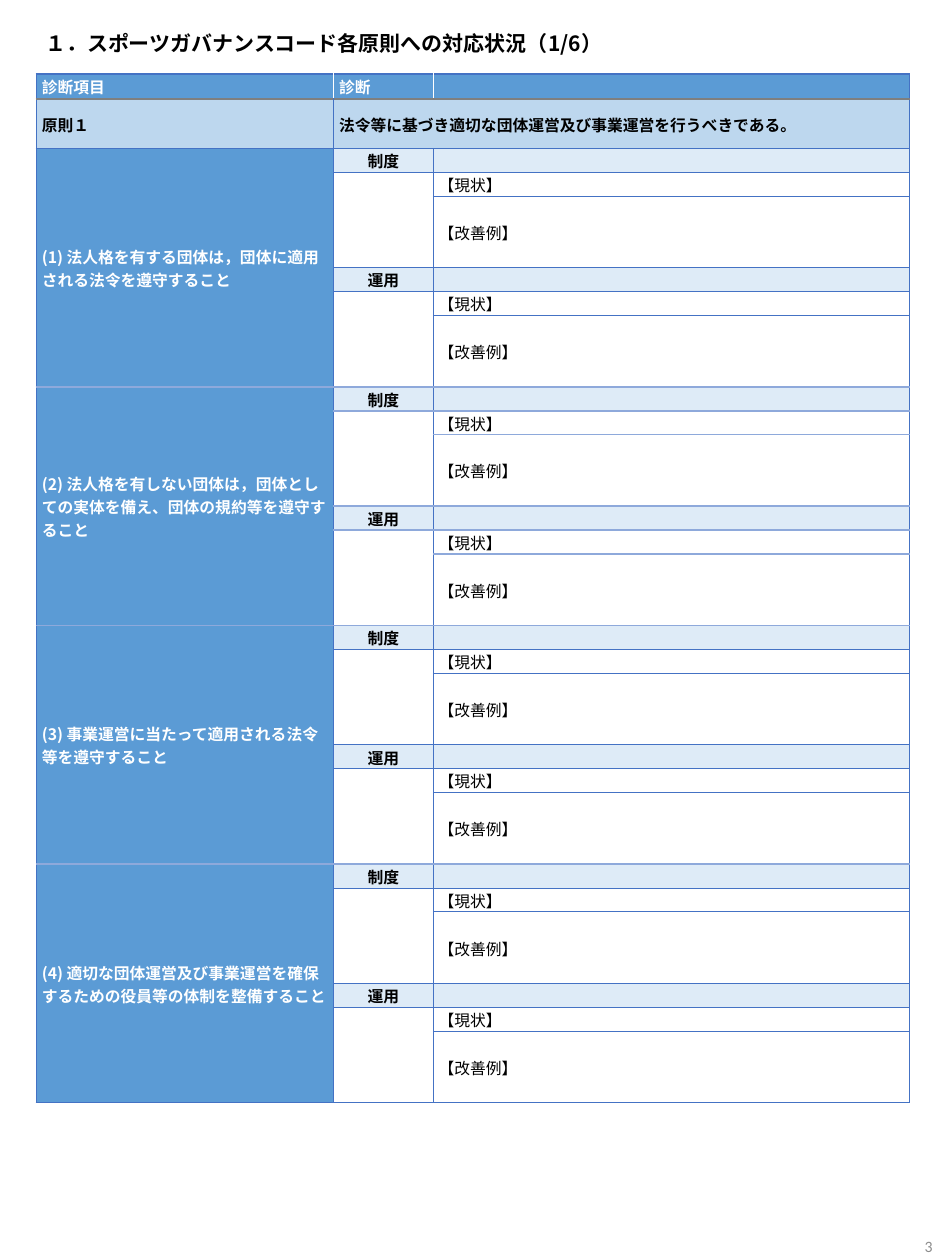
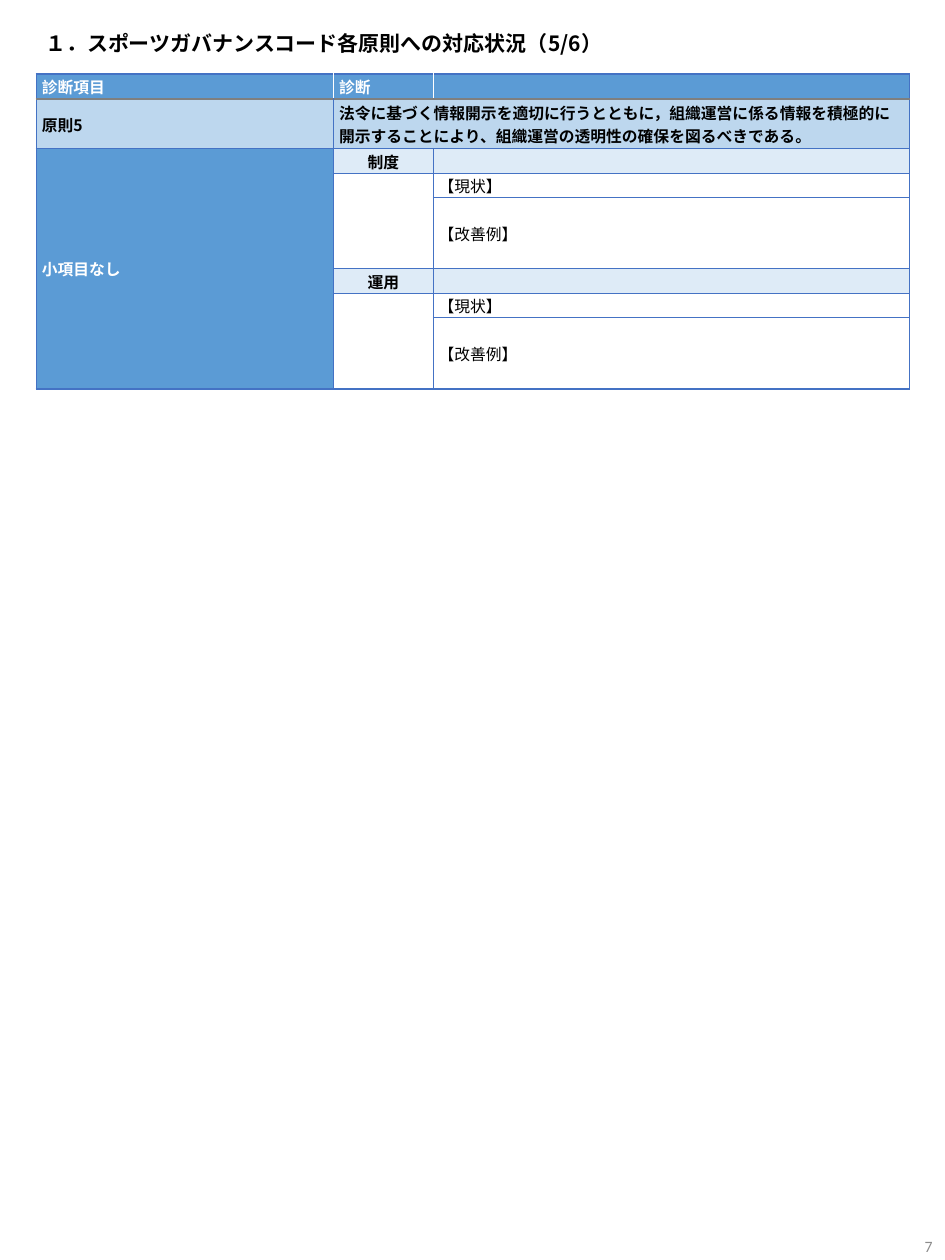
from dataclasses import dataclass

from lxml import etree
from pptx import Presentation
from pptx.dml.color import RGBColor
from pptx.enum.text import MSO_ANCHOR as Anchor, PP_ALIGN as Align
from pptx.oxml import ns
from pptx.util import Pt


@dataclass(frozen=True)
class Theme:
    blue: str = "5B9BD5"
    light: str = "BDD7EE"
    pale: str = "DEEBF7"
    line: str = "4472C4"
    soft: str = "8EA9DB"
    grey: str = "7F7F7F"
    mute: str = "8C8C8C"
    white: str = "FFFFFF"
    black: str = "000000"
    font: str = "Noto Sans CJK JP"
    num: str = "Calibri"
    head: int = 12
    body: int = 9
    thin: float = 0.5
    thick: float = 1


T = Theme()
PLAIN = "{2D5ABB26-0587-4C30-8999-92F81FD0307C}"
COLS = (169.9, 56.9, 272.2)
TOP, LEAD, ROW = 14.2, 28.2, 13.64
STEP = 10  # rows in one item
HALF = 5   # rows in one half of an item
INSET = {"margin_left": 3.1, "margin_right": 3.1,
         "margin_top": 0.6, "margin_bottom": 0}

PAGES = [
    dict(part="1/6", num="3", name="原則１", bar=ROW,
         rule="法令等に基づき適切な団体運営及び事業運営を行うべきである。",
         items=["(1) 法人格を有する団体は，団体に適用される法令を遵守すること",
                "(2) 法人格を有しない団体は，団体としての実体を備え、団体の規約等を遵守すること",
                "(3) 事業運営に当たって適用される法令等を遵守すること",
                "(4) 適切な団体運営及び事業運営を確保するための役員等の体制を整備すること"],
         soft=[1]),
    dict(part="5/6", num="7", name="原則5", bar=TOP,
         rule="法令に基づく情報開示を適切に行うとともに，組織運営に係る情報を"
              "積極的に開示することにより、組織運営の透明性の確保を図るべきである。",
         items=["小項目なし"], soft=[]),
]


def put(obj, **vals):
    for key, val in vals.items():
        setattr(obj, key, val)


def write(frame, words, color=T.black, size=T.body, bold=True,
          face=T.font, align=Align.LEFT):
    para = frame.paragraphs[0]
    para.alignment = align
    run = para.add_run()
    run.text = words
    put(run.font, size=Pt(size), bold=bold, name=face)
    run.font.color.rgb = RGBColor.from_string(color)
    etree.SubElement(run.font._element, ns.qn("a:ea"), typeface=face)


def label(slide, box, words, anchor=Anchor.TOP, **style):
    frame = slide.shapes.add_textbox(*map(Pt, box)).text_frame
    put(frame, word_wrap=True, vertical_anchor=anchor)
    write(frame, words, **style)


def edge(cell, side, style):
    if not style:
        return
    color, width = style
    line = etree.SubElement(cell._tc.get_or_add_tcPr(), ns.qn("a:ln" + side),
                            w=str(int(Pt(width))))
    fill = etree.SubElement(line, ns.qn("a:solidFill"))
    etree.SubElement(fill, ns.qn("a:srgbClr"), val=color)


def rows_of(page):
    """Map each row boundary to the line drawn along it."""
    count = len(page["items"])
    last = 2 + STEP * count
    rows = {}
    for i in range(count):
        start = 2 + STEP * i
        for off in (0, 1, HALF, HALF + 1):
            pale = i in page["soft"] or (off == 0 and i > 0)
            rows[start + off] = (T.soft, T.thick) if pale else (T.line, T.thin)
    rows.update({0: (T.line, T.thick), 1: (T.grey, T.thick),
                 last: (T.line, T.thick)})
    return rows


def rule_x(row, col):
    """Line at a column boundary of one row, or None."""
    if col in (0, 3):
        return T.line, T.thick
    if col == 1 and row == 0:
        return T.white, T.thick
    return None if col == 2 and row < 2 else (T.line, T.thin)


def frame_cells(table, page):
    rows = rows_of(page)

    def rule_y(row, col):
        inner = col == 0 and row > 2 and (row - 2) % STEP
        return None if inner else rows.get(row)

    for r in range(len(table.rows)):
        for c in range(len(COLS)):
            cell = table.cell(r, c)
            high = cell.span_height if cell.is_merge_origin else 1
            wide = cell.span_width if cell.is_merge_origin else 1
            edge(cell, "L", rule_x(r, c))
            edge(cell, "R", rule_x(r, c + wide))
            edge(cell, "T", rule_y(r, c))
            edge(cell, "B", rule_y(r + high, c))
            put(cell, vertical_anchor=Anchor.MIDDLE,
                **{key: Pt(val) for key, val in INSET.items()})
            para = cell.text_frame.paragraphs[0]._p
            etree.SubElement(para, ns.qn("a:endParaRPr"), sz=str(T.body * 100))


def paint(cell, color):
    cell.fill.solid()
    cell.fill.fore_color.rgb = RGBColor.from_string(color)


def item(table, top, words):
    """Fill the rows of one item: its name, then the two halves."""
    name = table.cell(top, 0)
    paint(name, T.blue)
    write(name.text_frame, words, color=T.white)
    for i, kind in enumerate(("制度", "運用")):
        row = top + HALF * i
        for col in (1, 2):
            paint(table.cell(row, col), T.pale)
        write(table.cell(row, 1).text_frame, kind, align=Align.CENTER)
        for off, note in ((1, "【現状】"), (3, "【改善例】")):
            write(table.cell(row + off, 2).text_frame, note, bold=False)


def merge(table, count):
    table.cell(1, 1).merge(table.cell(1, 2))
    for top in range(2, 2 + STEP * count, STEP):
        table.cell(top, 0).merge(table.cell(top + STEP - 1, 0))
        for row in (top + 1, top + HALF + 1):
            table.cell(row, 1).merge(table.cell(row + HALF - 2, 1))


def grid(slide, left, top, page):
    items = page["items"]
    half = [page["bar"]] + [ROW] * (HALF - 1)
    highs = [TOP, LEAD] + half * 2 * len(items)
    box = map(Pt, (left, top, sum(COLS), sum(highs)))
    table = slide.shapes.add_table(len(highs), len(COLS), *box).table
    put(table, first_row=False, horz_banding=False)
    table._tbl.tblPr.find(ns.qn("a:tableStyleId")).text = PLAIN
    for col, wide in zip(table.columns, COLS):
        col.width = Pt(wide)
    for row, high in zip(table.rows, highs):
        row.height = Pt(high)
    merge(table, len(items))
    frame_cells(table, page)
    for col in range(len(COLS)):
        paint(table.cell(0, col), T.blue)
        paint(table.cell(1, col), T.light)
    for col, words in enumerate(("診断項目", "診断")):
        write(table.cell(0, col).text_frame, words, color=T.white)
    for col, words in enumerate((page["name"], page["rule"])):
        write(table.cell(1, col).text_frame, words)
    for i, words in enumerate(items):
        item(table, 2 + STEP * i, words)


def sheet(deck, page):
    slide = deck.slides.add_slide(deck.slide_layouts[6])
    label(slide, (18.7, 13.7, 501.8, 21.6),
          f"１．スポーツガバナンスコード各原則への対応状況（{page['part']}）",
          size=T.head)
    label(slide, (500.4, 697, 39.6, 23.8), page["num"], Anchor.BOTTOM,
          color=T.mute, bold=False, face=T.num, align=Align.RIGHT)
    grid(slide, 20.8, 42.4, page)


def main():
    deck = Presentation()
    put(deck, slide_width=Pt(540), slide_height=Pt(720))
    for page in PAGES:
        sheet(deck, page)
    deck.save("out.pptx")


if __name__ == "__main__":
    main()
